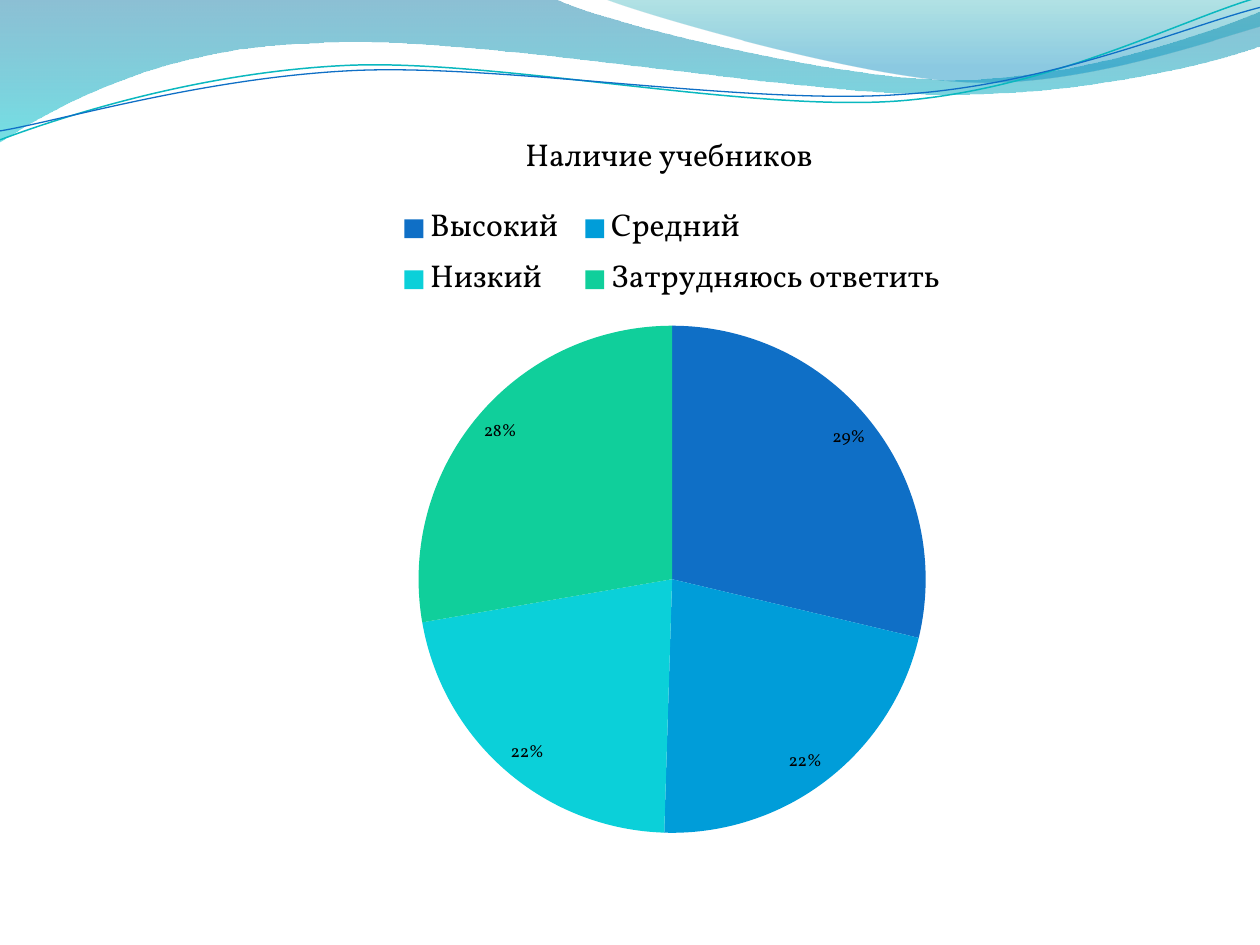
from pptx import Presentation
from pptx.chart.data import CategoryChartData
from pptx.dml.color import RGBColor
from pptx.enum.chart import XL_CHART_TYPE, XL_LABEL_POSITION, XL_LEGEND_POSITION
from pptx.oxml.ns import qn
from pptx.util import Cm, Pt
from lxml import etree

PIE = XL_CHART_TYPE.PIE
TOP = XL_LEGEND_POSITION.TOP
INSIDE = XL_LABEL_POSITION.INSIDE_END

BLACK = RGBColor(0x00, 0x00, 0x00)
BLUE = RGBColor(0x0F, 0x6F, 0xC6)
SKY = RGBColor(0x00, 0x9D, 0xD9)
CYAN = RGBColor(0x0B, 0xD0, 0xD9)
GREEN = RGBColor(0x10, 0xCF, 0x9B)
TEAL = RGBColor(0x0A, 0xB8, 0xBF)
DEEP = RGBColor(0x00, 0x74, 0xA1)
AQUA = RGBColor(0x00, 0xC6, 0xCF)
SEA = RGBColor(0x00, 0xA1, 0xA9)
AZURE = RGBColor(0x00, 0x8B, 0xBF)

FONT = "Vollkorn"
TILT = -2.7
TITLE = "Наличие учебников "
LEVELS = [
    ("Высокий ", 29, BLUE),
    ("Средний ", 22, SKY),
    ("Низкий ", 22, CYAN),
    ("Затрудняюсь ответить", 28, GREEN),
]
WAVES = [
    ([(0, 0), (11.18, -0.03),
      (12.09, 0.43, 16.87, 1.6, 19.25, 1.6),
      (21.67, 1.6, 24.33, 0.66, 25.4, 0.23),
      (25.43, 0.91),
      (24.97, 1.12, 22.1, 1.93, 18.95, 1.9),
      (15.8, 1.9, 9.7, 0.71, 6.53, 0.86),
      (3.28, 0.91, 1.17, 2.11, -0.03, 2.87),
      (0, 0)],
     [(0, DEEP, 45), (1, AQUA, 55)]),
    ([(12.17, -0.03),
      (12.93, 0.28, 17.32, 1.57, 19.53, 1.65),
      (21.74, 1.75, 24.41, 0.81, 25.4, 0.53),
      (25.4, 0), (12.17, -0.03)],
     [(0, SEA, 30), (0.8, AZURE, 45)]),
]
LINES = [
    ([(-0.05, 2.22),
      (1.19, 1.82, 4.02, 1.04, 7.05, 1.05),
      (10.05, 1.07, 15.02, 2.37, 18.08, 2.29),
      (21.13, 2.2, 23.87, 0.91, 25.41, 0.55)], TEAL, 0.85),
    ([(-0.04, 2.04),
      (1.16, 1.9, 4.18, 1.15, 7.2, 1.16),
      (10.25, 1.18, 15.13, 2.25, 18.19, 2.16),
      (21.21, 2.1, 23.93, 1.06, 25.45, 0.75)], BLUE, 0.75),
]


def add_path(slide, steps, close):
    """Draw an outline of straight lines and Bezier curves."""
    ends = [(Cm(step[-2]), Cm(step[-1])) for step in steps]
    pen = slide.shapes.build_freeform(*ends[0])
    pen.add_line_segments(ends[1:], close=close)
    shape = pen.convert_to_shape()
    shape.shadow.inherit = False
    nodes = list(shape.element.spPr.iter(qn("a:lnTo")))
    for node, step in zip(nodes, steps[1:]):
        if len(step) == 6:
            bend(node, step, shape.left, shape.top)
    return shape


def bend(node, step, left, top):
    """Make a straight segment a Bezier curve."""
    node.tag = qn("a:cubicBezTo")
    for i in (2, 0):
        knot = etree.Element(qn("a:pt"))
        knot.set("x", str(Cm(step[i]) - left))
        knot.set("y", str(Cm(step[i + 1]) - top))
        node.insert(0, knot)


def add_wave(slide, steps, stops):
    """Add a closed wave with a see-through downward gradient."""
    shape = add_path(slide, steps, True)
    shape.line.fill.background()
    fill = shape.fill
    fill.gradient()
    fill.gradient_angle = 270
    for stop, (place, color, _) in zip(fill.gradient_stops, stops):
        stop.position = place
        stop.color.rgb = color
    nodes = list(shape.element.spPr.iter(qn("a:srgbClr")))
    for node, (_, _, alpha) in zip(nodes, stops):
        etree.SubElement(node, qn("a:alpha")).set("val", str(alpha * 1000))


def add_curve(slide, steps, color, width):
    """Add an open, slightly turned curved line."""
    shape = add_path(slide, steps, False)
    shape.rotation = TILT
    shape.fill.background()
    shape.line.color.rgb = color
    shape.line.width = Pt(width)


def set_font(font, size):
    """Give chart text its face, size and colour."""
    font.name = FONT
    font.size = Pt(size)
    font.bold = False
    font.color.rgb = BLACK


def add_pie(slide):
    """Add the pie of answers with its title, legend and labels."""
    data = CategoryChartData()
    data.categories = [name for name, _, _ in LEVELS]
    data.add_series("Series 1", [value for _, value, _ in LEVELS])
    chart = slide.shapes.add_chart(
        PIE, Cm(1.7), Cm(2.13), Cm(23.7), Cm(15.01), data).chart
    set_font(chart.font, 10)

    chart.has_title = True
    frame = chart.chart_title.text_frame
    frame.text = TITLE
    line = frame.paragraphs[0]
    set_font(line.font, 18)
    set_font(line.runs[0].font, 18)

    chart.has_legend = True
    chart.legend.position = TOP
    chart.legend.include_in_layout = False
    set_font(chart.legend.font, 18)

    plot = chart.plots[0]
    plot.vary_by_categories = True
    for i, (_, _, color) in enumerate(LEVELS):
        fill = plot.series[0].points[i].format.fill
        fill.solid()
        fill.fore_color.rgb = color

    plot.has_data_labels = True
    labels = plot.data_labels
    labels.show_value = False
    labels.show_percentage = True
    labels.number_format = "0%"
    labels.number_format_is_linked = False
    labels.position = INSIDE
    set_font(labels.font, 10)


def main():
    """Build the slide and save it."""
    deck = Presentation()
    deck.slide_width = Cm(25.4)
    deck.slide_height = Cm(19.05)
    slide = deck.slides.add_slide(deck.slide_layouts[6])
    for wave in WAVES:
        add_wave(slide, *wave)
    for line in LINES:
        add_curve(slide, *line)
    add_pie(slide)
    deck.save("out.pptx")


if __name__ == "__main__":
    main()
